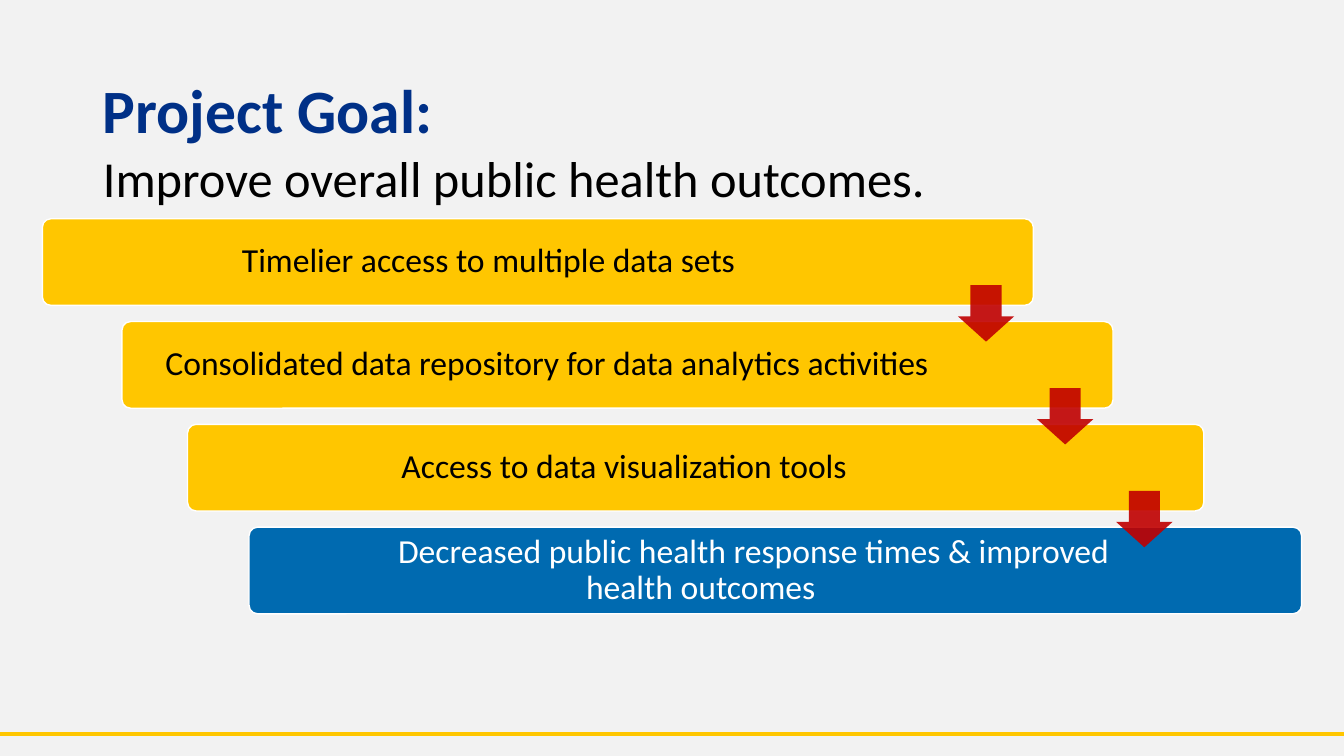
import pptx
import pptx.util
import pptx.dml.color
import pptx.enum.shapes
import pptx.enum.text
import pptx.oxml.ns
from dataclasses import dataclass
from lxml import etree

TITLE = "Project Goal:"
GOAL = "Improve overall public health outcomes."
# text, bar left, bar width, text width, first-line indent (inches), is outcome
STEPS = [
    ("Timelier access to multiple data sets", 0.42, 9.83, 8.79, 0, False),
    ("Consolidated data repository for data analytics activities",
     1.21, 9.83, 8.37, 0, False),
    ("Access to data visualization tools", 1.86, 10.08, 8.6, 0, False),
    ("Decreased public health response times & improved health outcomes",
     2.47, 10.44, 8.9, 1.05, True),
]


@dataclass(frozen=True)
class Theme:
    font: str = "Calibri"
    back: str = "F2F2F2"
    navy: str = "003087"
    gold: str = "FFC600"
    blue: str = "006AB0"
    red: str = "C00000"
    black: str = "000000"
    white: str = "FFFFFF"
    head: int = 44
    lead: int = 36
    step: int = 24


LOOK = Theme()
WIDE, HIGH = 13.33, 7.5
TOP, PITCH, BAR = 2.17, 1.02, 0.86
PAD = 0.03
ARROW, ARROW_X, ARROW_DX, ARROW_DY = 0.56, 9.5, 0.785, 0.66

Inches = pptx.util.Inches
Pt = pptx.util.Pt
SHAPE = pptx.enum.shapes.MSO_SHAPE
ALIGN = pptx.enum.text.PP_ALIGN
ANCHOR = pptx.enum.text.MSO_ANCHOR
qn = pptx.oxml.ns.qn


def rgb(code):
    return pptx.dml.color.RGBColor.from_string(code)


def place(shape, left, top, width, height):
    shape.left, shape.top = Inches(left), Inches(top)
    shape.width, shape.height = Inches(width), Inches(height)


def write(shape, text, *, size, color, bold=False, align=ALIGN.LEFT,
          anchor=ANCHOR.TOP, inset=None, indent=0):
    frame = shape.text_frame
    frame.word_wrap = True
    frame.auto_size = pptx.enum.text.MSO_AUTO_SIZE.NONE
    frame.vertical_anchor = anchor
    if inset is not None:
        frame.margin_left = frame.margin_right = Inches(inset)
        frame.margin_top = frame.margin_bottom = Inches(inset)
    para = frame.paragraphs[0]
    para.alignment, para.line_spacing = align, 0.9
    para.space_before = Pt(0)
    props = para._p.get_or_add_pPr()
    props.set("marL", "0")
    props.set("indent", str(Inches(indent)))
    etree.SubElement(props, qn("a:buNone"))
    run = para.add_run()
    run.text = text
    run.font.name, run.font.size = LOOK.font, Pt(size)
    run.font.bold, run.font.color.rgb = bold, rgb(color)


def draw(slide, kind, box, fill, adjust, line=None, alpha=None):
    shape = slide.shapes.add_shape(kind, *map(Inches, box))
    shape.shadow.inherit = False
    for i, value in enumerate(adjust):
        shape.adjustments[i] = value
    shape.fill.solid()
    shape.fill.fore_color.rgb = rgb(fill)
    if alpha:
        tint = shape._element.spPr.find(qn("a:solidFill"))[0]
        etree.SubElement(tint, qn("a:alpha")).set("val", str(alpha * 1000))
    if line:
        shape.line.color.rgb, shape.line.width = rgb(line), Pt(1)
    else:
        shape.line.fill.background()


def rule(slide, y):
    line = slide.shapes.add_connector(
        pptx.enum.shapes.MSO_CONNECTOR.STRAIGHT,
        0, Inches(y), Inches(WIDE), Inches(y))
    line.line.color.rgb, line.line.width = rgb(LOOK.gold), Pt(3)
    etree.SubElement(line._element.spPr, qn("a:effectLst"))


def main():
    deck = pptx.Presentation()
    deck.slide_width, deck.slide_height = Inches(WIDE), Inches(HIGH)
    slide = deck.slides.add_slide(deck.slide_layouts[1])
    slide.background.fill.solid()
    slide.background.fill.fore_color.rgb = rgb(LOOK.back)
    rule(slide, 7.28)

    title, body = slide.shapes.title, slide.placeholders[1]
    place(title, 0.92, 0.4, 11.5, 1.45)
    write(title, TITLE, size=LOOK.head, color=LOOK.navy, bold=True,
          anchor=ANCHOR.MIDDLE)
    place(body, 0.92, 1.48, 11.5, 4.76)
    write(body, GOAL, size=LOOK.lead, color=LOOK.black)

    for i, (text, left, width, span, indent, final) in enumerate(STEPS):
        top = TOP + i * PITCH
        draw(slide, SHAPE.ROUNDED_RECTANGLE, (left, top, width, BAR),
             LOOK.blue if final else LOOK.gold, [0.1], line=LOOK.white)
        label = slide.shapes.add_textbox(*map(
            Inches, (left + PAD, top + PAD, span, BAR - 2 * PAD)))
        write(label, text, size=LOOK.step, align=ALIGN.CENTER,
              color=LOOK.white if final else LOOK.black,
              anchor=ANCHOR.MIDDLE, inset=0.1, indent=indent)

    for i in range(len(STEPS) - 1):
        box = (ARROW_X + i * ARROW_DX, TOP + ARROW_DY + i * PITCH,
               ARROW, ARROW)
        draw(slide, SHAPE.DOWN_ARROW, box, LOOK.red, [0.55, 0.45], alpha=90)

    deck.save("out.pptx")


if __name__ == "__main__":
    main()
